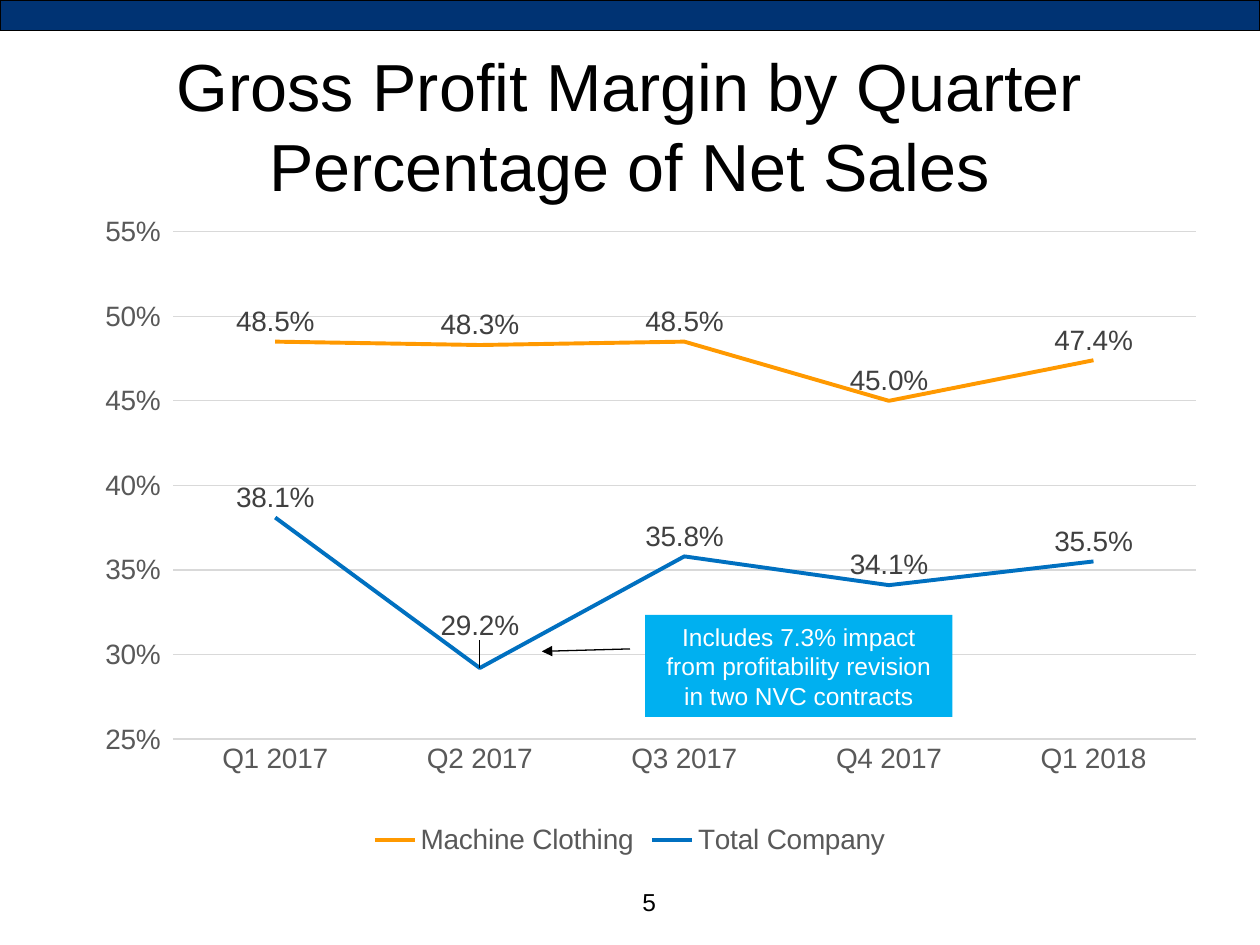
from lxml.etree import SubElement
from pptx import Presentation
from pptx.chart.data import CategoryChartData
from pptx.dml.color import RGBColor
from pptx.enum.chart import XL_CHART_TYPE, XL_LABEL_POSITION, XL_LEGEND_POSITION, XL_TICK_MARK
from pptx.enum.shapes import MSO_CONNECTOR, MSO_SHAPE
from pptx.enum.text import MSO_ANCHOR, PP_ALIGN
from pptx.oxml import parse_xml
from pptx.oxml.ns import nsdecls, qn
from pptx.util import Inches, Pt


def color(value):
    return RGBColor.from_string(value)


def manual_layout(**settings):
    children = "".join(f'<c:{name} val="{value}"/>' for name, value in settings.items())
    return parse_xml(f'<c:layout {nsdecls("c")}><c:manualLayout>{children}</c:manualLayout></c:layout>')


class SlideBuilder:
    font = "Arial"
    black = "000000"
    white = "FFFFFF"
    navy = "003373"
    sky = "00B0F0"
    axis_gray = "595959"
    label_gray = "404040"
    grid_gray = "D9D9D9"
    columns = 100
    rows = 75

    def __init__(self, deck):
        self.deck = deck
        self.slide = deck.slides.add_slide(deck.slide_layouts[6])

    def point(self, column, row):
        return (int(self.deck.slide_width * column / self.columns),
                int(self.deck.slide_height * row / self.rows))

    def area(self, column, row, width, height):
        return *self.point(column, row), *self.point(width, height)

    def style(self, font, size, value):
        font.name = self.font
        font.size = Pt(size)
        font.color.rgb = color(value)

    def set_text(self, box, text, size, value, align, anchor, spacing=None):
        frame = box.text_frame
        frame.word_wrap = True
        frame.vertical_anchor = anchor
        frame.text = text
        for para in frame.paragraphs:
            para.alignment = align
            para.line_spacing = spacing
            for span in para.runs:
                self.style(span.font, size, value)

    def text(self, area, text, size, align=PP_ALIGN.LEFT, spacing=None):
        box = self.slide.shapes.add_textbox(*self.area(*area))
        self.set_text(box, text, size, self.black, align, MSO_ANCHOR.TOP, spacing)

    def rectangle(self, area, fill, line=None, text=None, size=14):
        box = self.slide.shapes.add_shape(MSO_SHAPE.RECTANGLE, *self.area(*area))
        box.shadow.inherit = False
        box.fill.solid()
        box.fill.fore_color.rgb = color(fill)
        if line:
            box.line.color.rgb = color(line)
            box.line.width = Pt(0.75)
        else:
            box.line.fill.background()
        if text:
            self.set_text(box, text, size, self.white, PP_ALIGN.CENTER, MSO_ANCHOR.MIDDLE)

    def arrow(self, start, end):
        arrow = self.slide.shapes.add_connector(
            MSO_CONNECTOR.STRAIGHT, *self.point(*start), *self.point(*end))
        arrow.line.color.rgb = color(self.black)
        arrow.line.width = Pt(0.75)
        properties = arrow._element.spPr
        SubElement(properties.find(qn("a:ln")), qn("a:tailEnd"), type="triangle")
        SubElement(properties, qn("a:effectLst"))

    def line_chart(self, area, categories, series, size=16):
        data = CategoryChartData(number_format="0.0%")
        data.categories = categories
        for name, values, _ in series:
            data.add_series(name, values)
        chart = self.slide.shapes.add_chart(
            XL_CHART_TYPE.LINE, *self.area(*area), data).chart
        chart.has_title = False
        self.style(chart.font, size, self.axis_gray)
        chart.has_legend = True
        chart.legend.position = XL_LEGEND_POSITION.BOTTOM
        chart.legend.include_in_layout = False
        self.style(chart.legend.font, size, self.axis_gray)
        self.style_axes(chart, size)
        plot = chart.plots[0]
        plot.vary_by_categories = False
        for line, (_, _, value) in zip(plot.series, series):
            line.smooth = False
            line.format.line.color.rgb = color(value)
            line.format.line.width = Pt(2.25)
            labels = line.data_labels
            labels.show_value = True
            labels.number_format = "0.0%"
            labels.number_format_is_linked = False
            labels.position = XL_LABEL_POSITION.ABOVE
            self.style(labels.font, size, self.label_gray)
        plot_area = chart._chartSpace.chart.plotArea
        for layout in plot_area.findall(qn("c:layout")):
            plot_area.remove(layout)
        plot_area.insert(0, manual_layout(
            layoutTarget="inner", xMode="edge", yMode="edge", x=0.097, y=0.031, w=0.902, h=0.782))
        return chart

    def style_axes(self, chart, size):
        for axis in (chart.category_axis, chart.value_axis):
            self.style(axis.tick_labels.font, size, self.axis_gray)
        chart.category_axis.major_tick_mark = XL_TICK_MARK.NONE
        chart.category_axis.format.line.color.rgb = color(self.grid_gray)
        chart.category_axis.format.line.width = Pt(0.75)
        axis = chart.value_axis
        axis.minimum_scale, axis.maximum_scale, axis.major_unit = 0.25, 0.55, 0.05
        axis.major_tick_mark = XL_TICK_MARK.OUTSIDE
        axis.tick_labels.number_format = "0%"
        axis.tick_labels.number_format_is_linked = False
        axis.format.line.fill.background()
        axis.major_gridlines.format.line.color.rgb = color(self.grid_gray)
        axis.major_gridlines.format.line.width = Pt(0.75)

    def shift_label(self, series, index, rise):
        label = series.points[index].data_label
        label.position = XL_LABEL_POSITION.ABOVE
        self.style(label.font, 16, self.label_gray)
        element = series.data_labels._element.find(qn("c:dLbl"))
        element.insert(1, manual_layout(x=0, y=-rise))


def main():
    deck = Presentation()
    deck.slide_width, deck.slide_height = Inches(10), Inches(7.5)
    builder = SlideBuilder(deck)
    builder.rectangle((0, 0, 100, 2.4), builder.navy, builder.black)
    builder.text((5, 3, 90, 12.5), "Gross Profit Margin by Quarter\vPercentage of Net Sales",
                 38, PP_ALIGN.CENTER, Pt(46))
    chart = builder.line_chart(
        (5, 16.8, 90, 51.5),
        ["Q1 2017", "Q2 2017", "Q3 2017", "Q4 2017", "Q1 2018"],
        [("Machine Clothing", (0.485, 0.483, 0.485, 0.45, 0.474), "FF9900"),
         ("Total Company", (0.381, 0.292, 0.358, 0.341, 0.355), "0070C0")])
    builder.shift_label(chart.plots[0].series[1], 1, 0.035)
    builder.text((50, 69.9, 4.7, 3.4), "5", 14)
    builder.rectangle((51.2, 48.8, 24.4, 8.1), builder.sky,
                      text="Includes 7.3% impact from profitability revision in two NVC contracts")
    builder.arrow((50, 51.5), (43, 51.7))
    deck.save("out.pptx")


if __name__ == "__main__":
    main()
